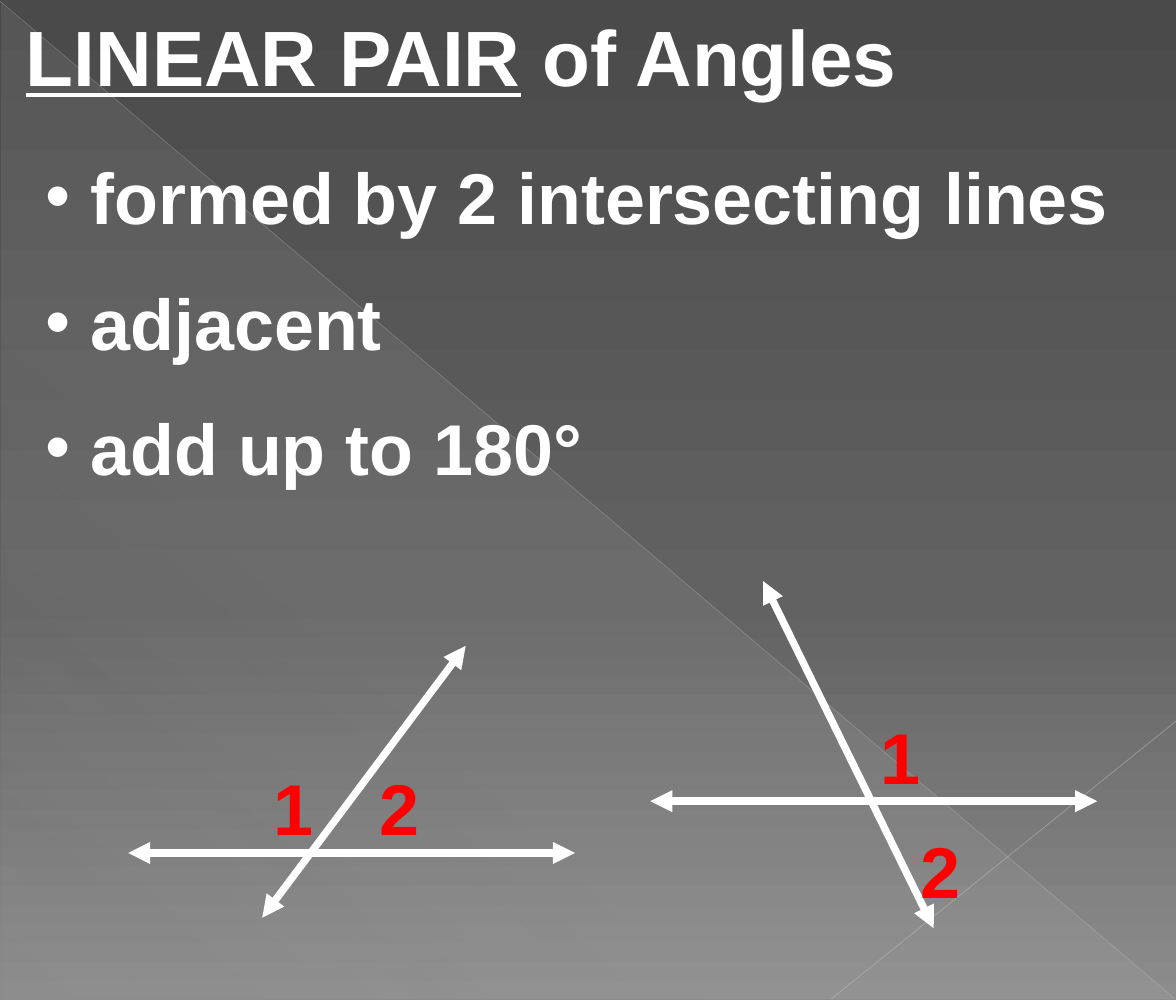
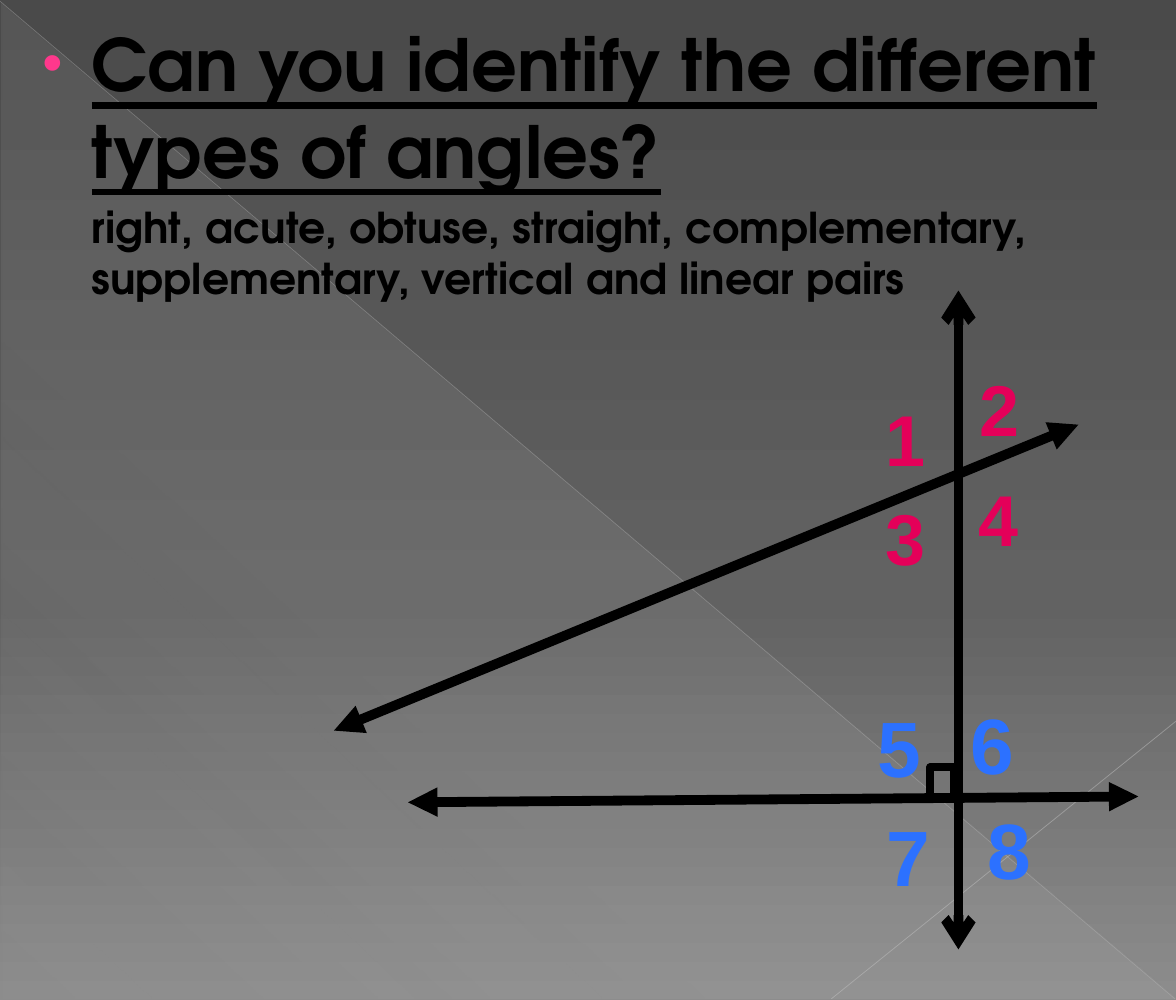
from dataclasses import dataclass

from lxml.etree import SubElement
from pptx import Presentation
from pptx.dml.color import RGBColor
from pptx.enum.shapes import MSO_CONNECTOR, MSO_SHAPE
from pptx.enum.text import MSO_ANCHOR, MSO_AUTO_SIZE, PP_ALIGN
from pptx.oxml.ns import qn
from pptx.util import Inches, Pt

COLUMNS, ROWS = 100, 85
WIDTH, HEIGHT = Inches(10), Inches(8.5)


@dataclass(frozen=True)
class Theme:
    # Colours
    light: str = "FFFFFF"
    dark: str = "000000"
    red: str = "FF0000"
    crimson: str = "E40059"
    blue: str = "2C71FF"
    bullet: str = "FF388C"
    band: str = "D2D2D2"
    diagonal: str = "BFBFBF"
    corner: str = "C6C6C6"
    # Gradient stops: position, colour, opacity
    backdrop: tuple = ((0, "4A4A4A", 100), (60, "626262", 100), (100, "8C8C8C", 100))
    veil: tuple = ((0, "D2D2D2", 10), (70, "D2D2D2", 8), (100, "D2D2D2", 1))
    # Fonts, type sizes and line widths
    plain: str = "Arial"
    round: str = "TeX Gyre Adventor"
    title: int = 48
    large: int = 44
    small: int = 26
    thin: float = 4.5
    thick: float = 6


def column(count):
    return round(WIDTH * count / COLUMNS)


def row(count):
    return round(HEIGHT * count / ROWS)


def add_alpha(color, opacity):
    SubElement(color, qn("a:alpha"), val=str(opacity * 1000))


def set_gradient(fill, element, stops, angle):
    fill.gradient()
    gradient = next(element.iter(qn("a:gradFill")))
    for child in list(gradient):
        gradient.remove(child)
    stop_list = SubElement(gradient, qn("a:gsLst"))
    for position, shade, opacity in stops:
        stop = SubElement(stop_list, qn("a:gs"), pos=str(position * 1000))
        color = SubElement(stop, qn("a:srgbClr"), val=shade)
        if opacity < 100:
            add_alpha(color, opacity)
    SubElement(gradient, qn("a:lin"), ang=str(angle * 60000), scaled="0")


class Deck:
    def __init__(self, theme):
        self.theme = theme
        self.deck = Presentation()
        self.deck.slide_width, self.deck.slide_height = WIDTH, HEIGHT
        self.page = None

    def add_page(self):
        self.page = self.deck.slides.add_slide(self.deck.slide_layouts[1])

    def draw_master(self):
        """Draw the shared backdrop on the page, then move it to the master."""
        theme, master = self.theme, self.deck.slide_master
        set_gradient(master.background.fill, master.element, theme.backdrop, 90)
        veil = self.shape(MSO_SHAPE.RIGHT_TRIANGLE, 0.1, 0.2, 99.9, 84.7)
        set_gradient(veil.fill, veil.element, theme.veil, 133)
        veil.line.fill.background()
        diagonal = self.line((0, 0.1), (99.9, 84.9), theme.diagonal, 0.39, opacity=35)
        corner = self.line((100, 61.3), (70.7, 84.9), theme.corner, 0.47, opacity=45)
        first_shape = master.shapes[0].element
        for part in (veil, diagonal, corner):
            first_shape.addprevious(part.element)

    def shape(self, kind, left, top, width, height):
        shape = self.page.shapes.add_shape(
            kind, column(left), row(top), column(width), row(height))
        shape.shadow.inherit = False
        return shape

    def line(self, start, end, color, width, arrow=None, opacity=100):
        line = self.page.shapes.add_connector(
            MSO_CONNECTOR.STRAIGHT,
            column(start[0]), row(start[1]), column(end[0]), row(end[1]))
        line.line.color.rgb = RGBColor.from_string(color)
        line.line.width = Pt(width)
        properties = line.element.spPr
        outline = properties.find(qn("a:ln"))
        if opacity < 100:
            add_alpha(next(outline.iter(qn("a:srgbClr"))), opacity)
        if arrow:
            for end_name in ("a:headEnd", "a:tailEnd"):
                SubElement(outline, qn(end_name), type=arrow)
        SubElement(properties, qn("a:effectLst"))
        return line

    def style(self, para, font, size, color):
        para.font.name, para.font.size, para.font.bold = font, Pt(size), True
        para.font.color.rgb = RGBColor.from_string(color)

    def placeholder(self, index, left, top, width, height):
        box = self.page.placeholders[index]
        box.left, box.top = column(left), row(top)
        box.width, box.height = column(width), row(height)
        frame = box.text_frame
        frame.auto_size = MSO_AUTO_SIZE.NONE
        frame.vertical_anchor = MSO_ANCHOR.TOP
        frame.word_wrap = True
        return frame

    def title(self, underlined, rest):
        para = self.placeholder(0, 1.2, 0.2, 80, 9).paragraphs[0]
        para.alignment = PP_ALIGN.LEFT
        self.style(para, self.theme.plain, self.theme.title, self.theme.light)
        para.add_run().text = underlined
        para.runs[0].font.underline = True
        para.add_run().text = rest

    def remove_title(self):
        title = self.page.shapes.title.element
        title.getparent().remove(title)

    def paragraph(self, frame, text, margin, hanging):
        para = frame.paragraphs[0] if not frame.text else frame.add_paragraph()
        para.text = text
        properties = para._p.get_or_add_pPr()
        properties.set("marL", str(column(margin)))
        properties.set("indent", str(-column(hanging)))
        return para

    def bullet(self, para, color=None, percent=100):
        properties = para._p.get_or_add_pPr()
        marks = []
        if color:
            shade = SubElement(properties, qn("a:buClr"))
            SubElement(shade, qn("a:srgbClr"), val=color)
            marks.append(shade)
        marks.append(SubElement(properties, qn("a:buSzPct"), val=str(percent * 1000)))
        marks.append(SubElement(properties, qn("a:buFont"), typeface="Arial"))
        marks.append(SubElement(properties, qn("a:buChar"), char="•"))
        # Bullet marks stand before the default run properties
        defaults = properties.find(qn("a:defRPr"))
        if defaults is not None:
            for mark in marks:
                defaults.addprevious(mark)

    def label(self, text, center, size, color):
        width, height = 6, 9
        box = self.page.shapes.add_textbox(
            column(center[0] - width / 2), row(center[1] - height / 2),
            column(width), row(height))
        frame = box.text_frame
        frame.word_wrap = False
        frame.vertical_anchor = MSO_ANCHOR.MIDDLE
        para = frame.paragraphs[0]
        para.text = text
        para.alignment = PP_ALIGN.CENTER
        self.style(para, self.theme.plain, size, color)


def draw_linear_pair(deck):
    theme = deck.theme
    deck.title("LINEAR PAIR", " of Angles")

    # Properties of a linear pair
    frame = deck.placeholder(1, 2.9, 12.5, 97, 28.7)
    for text in ("formed by 2 intersecting lines", "adjacent", "add up to 180°"):
        para = deck.paragraph(frame, text, 3.8, 3.8)
        para.space_before = Pt(24 if len(frame.paragraphs) > 1 else 0)
        deck.style(para, theme.plain, theme.large, theme.light)
        deck.bullet(para)

    # Two pairs of crossing lines
    for start, end in (((10.9, 72.5), (48.9, 72.5)), ((22.3, 78), (39.6, 54.9)),
                       ((55.3, 68.1), (93.3, 68.1)), ((64.9, 49.4), (79.4, 78.9))):
        deck.line(start, end, theme.light, theme.thin, "triangle")
    for text, center in (("1", (25, 68.6)), ("2", (34, 68.6)),
                         ("1", (76.6, 64.2)), ("2", (80, 73.9))):
        deck.label(text, center, theme.large, theme.red)


def draw_angle_types(deck):
    theme = deck.theme
    deck.remove_title()

    # Question and answer choices
    frame = deck.placeholder(1, 1.9, 1.2, 94.6, 52.7)
    question = deck.paragraph(
        frame, "Can you identify the different types of angles?", 4.9, 4.2)
    deck.style(question, theme.round, theme.large, theme.dark)
    question.font.underline = True
    deck.bullet(question, theme.bullet, 80)
    choices = deck.paragraph(
        frame, "right, acute, obtuse, straight, complementary, "
        "supplementary, vertical and linear pairs", 4.9, 0)
    deck.style(choices, theme.round, theme.small, theme.dark)
    choices._p.pPr.find(qn("a:defRPr")).addprevious(
        SubElement(choices._p.pPr, qn("a:buNone")))

    # Lines
    for start, end, arrow in (((34.7, 68.2), (96.8, 67.7), "triangle"),
                              ((81.5, 80.7), (81.5, 24.7), "arrow"),
                              ((28.4, 62.1), (91.7, 36.1), "triangle")):
        deck.line(start, end, theme.dark, theme.thick, arrow)

    # Angle numbers around the upper and the lower crossing
    upper = (77, 37.2), (85, 34.7), (77, 45.6), (84.9, 44)
    lower = (76.5, 63.4), (84.4, 63.2), (77.2, 72.7), (85.8, 72.1)
    for number, center in enumerate(upper, 1):
        deck.label(str(number), center, theme.large, theme.crimson)
    for number, center in enumerate(lower, 5):
        deck.label(str(number), center, theme.title, theme.blue)

    # Right angle mark
    mark = deck.shape(MSO_SHAPE.RECTANGLE, 79.1, 65.2, 2, 2.7)
    mark.fill.background()
    mark.line.color.rgb = RGBColor.from_string(theme.dark)
    mark.line.width = Pt(theme.thin)


def main():
    deck = Deck(Theme())
    for number, draw in enumerate((draw_linear_pair, draw_angle_types)):
        deck.add_page()
        if number == 0:
            deck.draw_master()
        draw(deck)
    deck.deck.save("out.pptx")


if __name__ == "__main__":
    main()
